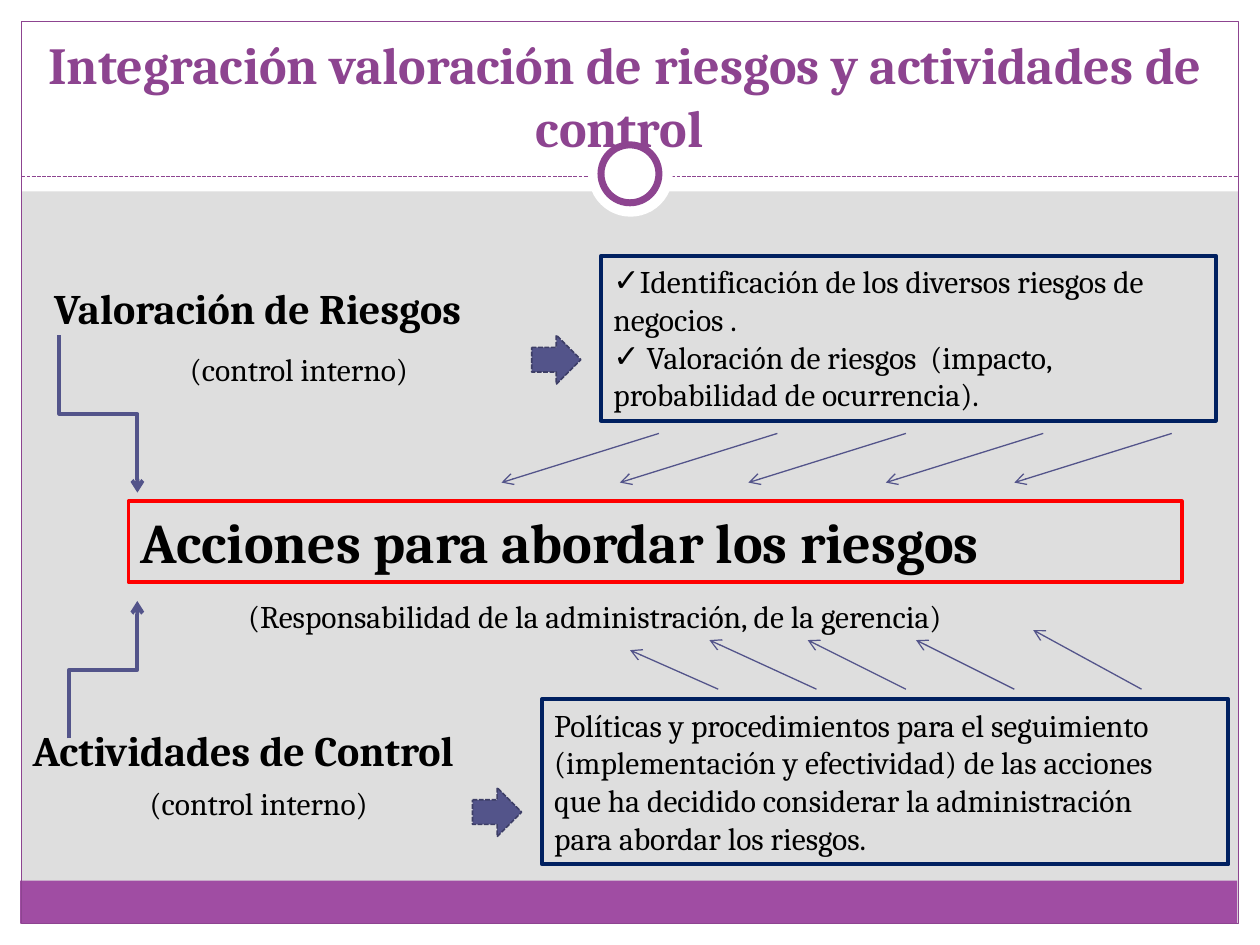
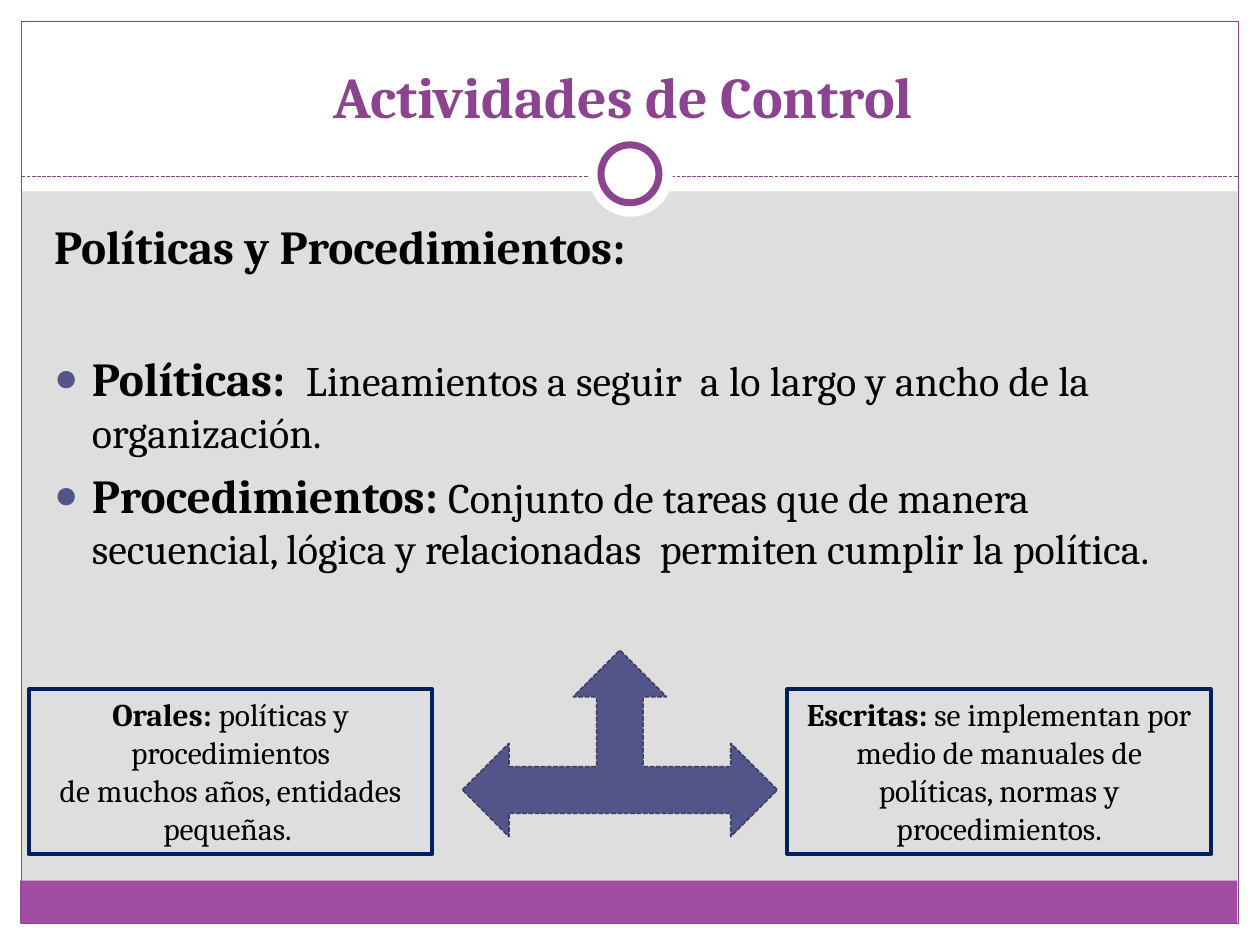
from pptx import Presentation
from pptx.dml.color import RGBColor as Rgb
from pptx.enum.dml import MSO_LINE as Dash
from pptx.enum.shapes import MSO_CONNECTOR as Link, MSO_SHAPE as Form
from pptx.enum.text import MSO_ANCHOR as Anchor, MSO_AUTO_SIZE as Fit, PP_ALIGN as Align
from pptx.oxml.ns import qn
from pptx.util import Inches, Pt
from lxml.etree import SubElement as Sub

INK = {
    "back": "DEDEDE", "white": "FFFFFF", "black": "000000",
    "band": "A04DA3", "plum": "8D4490", "slate": "53548A",
    "edge": "3D3E66", "navy": "002060", "red": "FF0000",
}
FONT = "Cambria"


def tint(name):
    return Rgb.from_string(INK[name])


def inch(vals):
    return [Inches(v) for v in vals]


class Deck:
    def __init__(self):
        self.prs = Presentation()
        self.prs.slide_width, self.prs.slide_height = inch((10, 7.5))
        self.slide = None

    def page(self):
        self.slide = self.prs.slides.add_slide(self.prs.slide_layouts[1])

    def frame(self):
        master = self.prs.slide_master
        master.background.fill.solid()
        master.background.fill.fore_color.rgb = tint("back")
        for at in ((0, 7.33, 10, 0.17), (0, 0, 10, 1.52),
                   (0, 0, 0.17, 7.5), (9.83, 0, 0.17, 7.5)):
            self.shape(Form.RECTANGLE, at, "white")
        self.shape(Form.RECTANGLE, (0.16, 6.99, 9.66, 0.34), "band")
        self.shape(Form.RECTANGLE, (0.17, 0.17, 9.66, 7.16), None, "plum", 0.75)
        self.line((0.17, 1.4), (9.83, 1.4), "plum", dash=Dash.SQUARE_DOT)
        self.shape(Form.OVAL, (4.67, 1.05, 0.67, 0.67), "white")
        self.shape(Form.OVAL, (4.77, 1.15, 0.46, 0.46), "white", "plum", 4)
        parts = [s for s in self.slide.shapes if not s.is_placeholder]
        for n, part in enumerate(parts):
            part.element.xpath(".//p:cNvPr")[0].set("id", str(50 + n))
            master.shapes.element.insert(2 + n, part.element)

    def stroke(self, line, color, width, dash=None):
        line.color.rgb = tint(color)
        line.width = Pt(width)
        if dash:
            line.dash_style = dash

    def shape(self, form, at, fill=None, edge=None, width=1, dash=None):
        item = self.slide.shapes.add_shape(form, *inch(at))
        item.shadow.inherit = False
        if fill:
            item.fill.solid()
            item.fill.fore_color.rgb = tint(fill)
        else:
            item.fill.background()
        if edge:
            self.stroke(item.line, edge, width, dash)
        else:
            item.line.fill.background()

    def arrow(self, form, at):
        self.shape(form, at, "slate", "edge", 0.9, Dash.SQUARE_DOT)

    def line(self, start, end, color="slate", width=0.75, dash=None, head=False, kind=Link.STRAIGHT):
        link = self.slide.shapes.add_connector(kind, *inch(start + end))
        self.stroke(link.line, color, width, dash)
        props = link.element.spPr
        if head:
            Sub(props.find(qn("a:ln")), qn("a:tailEnd"), type="arrow")
        Sub(props, qn("a:effectLst"))
        return link

    def elbow(self, start, end):
        (x1, y1), (x2, y2) = start, end
        mid, level = (x1 + x2) / 2, (y1 + y2) / 2
        way = 1 if y2 > y1 else -1
        far, near = abs(y2 - y1) / 2, way * (x2 - x1) / 2
        link = self.line((mid + far, level - near), (mid - far, level + near),
                         width=2.25, head=True, kind=Link.ELBOW)
        turn = 180 + 90 * way
        link.element.spPr.find(qn("a:xfrm")).set("rot", str(turn * 60000))

    def mark(self, para, sign=None, color=None, scale=None, indent=0):
        props = para._p.get_or_add_pPr()
        props.set("marL", str(Inches(indent)))
        props.set("indent", str(-Inches(indent)))
        if not sign:
            Sub(props, qn("a:buNone"))
            return
        if color:
            Sub(Sub(props, qn("a:buClr")), qn("a:srgbClr"), val=INK[color])
        if scale:
            Sub(props, qn("a:buSzPct"), val=str(scale * 1000))
        Sub(props, qn("a:buFont"), typeface="Arial")
        Sub(props, qn("a:buChar"), char=sign)

    def add_runs(self, para, runs, color="black"):
        for text, size, bold in runs:
            run = para.add_run()
            run.text = text
            font = run.font
            font.name, font.size, font.bold = FONT, Pt(size), bold
            font.color.rgb = tint(color)

    def paras(self, frame, count):
        for _ in range(count - 1):
            frame.add_paragraph()
        return frame.paragraphs

    def place(self, item, at):
        item.left, item.top, item.width, item.height = inch(at)
        item.text_frame.auto_size = Fit.NONE
        return item.text_frame

    def title(self, text, at, size):
        frame = self.place(self.slide.shapes.title, at)
        frame.vertical_anchor = Anchor.BOTTOM
        para = frame.paragraphs[0]
        para.alignment = Align.CENTER
        self.add_runs(para, [(text, size, True)], "plum")

    def body(self, at, rows, top=0.05):
        frame = self.place(self.slide.placeholders[1], at)
        frame.margin_top = Inches(top)
        for para, (sign, gap, runs) in zip(self.paras(frame, len(rows)), rows):
            para.space_before = Pt(gap)
            self.mark(para, sign, "slate", 85, 0.3)
            self.add_runs(para, runs)

    def text(self, at, rows, edge=None, wrap=False, align=None, ticks=()):
        item = self.slide.shapes.add_textbox(*inch(at))
        if edge:
            self.stroke(item.line, edge, 2.25)
        frame = item.text_frame
        frame.word_wrap = wrap
        frame.auto_size = Fit.SHAPE_TO_FIT_TEXT
        for n, (para, runs) in enumerate(zip(self.paras(frame, len(rows)), rows)):
            para.alignment = align
            if n in ticks:
                self.mark(para, "✓")
            self.add_runs(para, runs)


def plain(*rows):
    return [[(row, 18, False)] for row in rows]


def risks(deck):
    deck.title("Integración valoración de riesgos y actividades de control ",
               (0.16, 0.47, 9.61, 0.83), 29.7)
    deck.body((0.33, 1.67, 9.36, 5),
              [(None, 0, [("Valoración de Riesgos", 24, True)])], top=0.57)
    deck.text((4.77, 2.03, 4.88, 1.31), plain(
        "Identificación de los diversos riesgos de", "negocios .",
        " Valoración de riesgos  (impacto,", "probabilidad de ocurrencia)."),
        "navy", ticks=(0, 2))
    deck.text((1.02, 3.98, 8.36, 0.64),
              [[("Acciones para abordar los riesgos", 32, True)]], "red", wrap=True)
    deck.text((1.87, 4.69, 6.25, 0.4),
              plain("(Responsabilidad de la administración, de la gerencia)"))
    deck.text((0.16, 5.7, 4.21, 0.5), [[("Actividades de Control", 24, True)]])
    for x, y in ((1.41, 2.73), (1.09, 6.17)):
        deck.text((x, y, 2.07, 0.4), plain("(control interno)"))
    deck.text((4.3, 5.55, 5.45, 1.31), plain(
        "Políticas y procedimientos para el seguimiento",
        "(implementación y efectividad) de las acciones",
        "que ha decidido considerar la administración",
        "para abordar los riesgos."), "navy")
    for x, y in ((4.22, 2.66), (3.75, 6.25)):
        deck.arrow(Form.RIGHT_ARROW, (x, y, 0.39, 0.39))
    for x in (5.23, 6.17, 7.19, 8.28, 9.3):
        deck.line((x, 3.44), (x - 1.25, 3.83), head=True)
    for x, tip, y in ((9.06, 8.2, 5), (8.05, 7.27, 5.08), (7.19, 6.41, 5.08),
                      (6.48, 5.63, 5.08), (5.7, 5, 5.16)):
        deck.line((x, 5.47), (tip, y), head=True)
    deck.elbow((0.47, 2.66), (1.09, 3.91))
    deck.elbow((0.55, 5.86), (1.09, 4.77))


def rules(deck):
    deck.body((0.33, 1.67, 9.3, 5), [
        (None, 0, [("Políticas y Procedimientos:", 27, True)]),
        ("●", 43.4, [("Políticas:  ", 27, True),
                     ("Lineamientos a seguir  a lo largo y ancho de la organización.", 24, False)]),
        ("●", 5.4, [("Procedimientos: ", 27, True),
                    ("Conjunto de tareas que de manera  secuencial, lógica y "
                     "relacionadas  permiten cumplir la política.", 24, False)]),
    ])
    deck.title("Actividades de Control ", (0.33, 0.25, 9.33, 0.83), 33)
    deck.arrow(Form.LEFT_RIGHT_UP_ARROW, (3.67, 5.16, 2.5, 1.48))
    deck.text((0.23, 5.47, 3.2, 1.31), [
        [("Orales: ", 18, True), ("políticas y procedimientos", 18, False)],
        *plain("de muchos años, entidades", "pequeñas. ")],
        "navy", True, Align.CENTER)
    deck.text((6.25, 5.47, 3.36, 1.31), [
        [("Escritas: ", 18, True),
         ("se implementan por medio de manuales de políticas, normas y procedimientos.", 18, False)]],
        "navy", True, Align.CENTER)


def main():
    deck = Deck()
    deck.page()
    deck.frame()
    risks(deck)
    deck.page()
    rules(deck)
    deck.prs.save("out.pptx")


if __name__ == "__main__":
    main()
